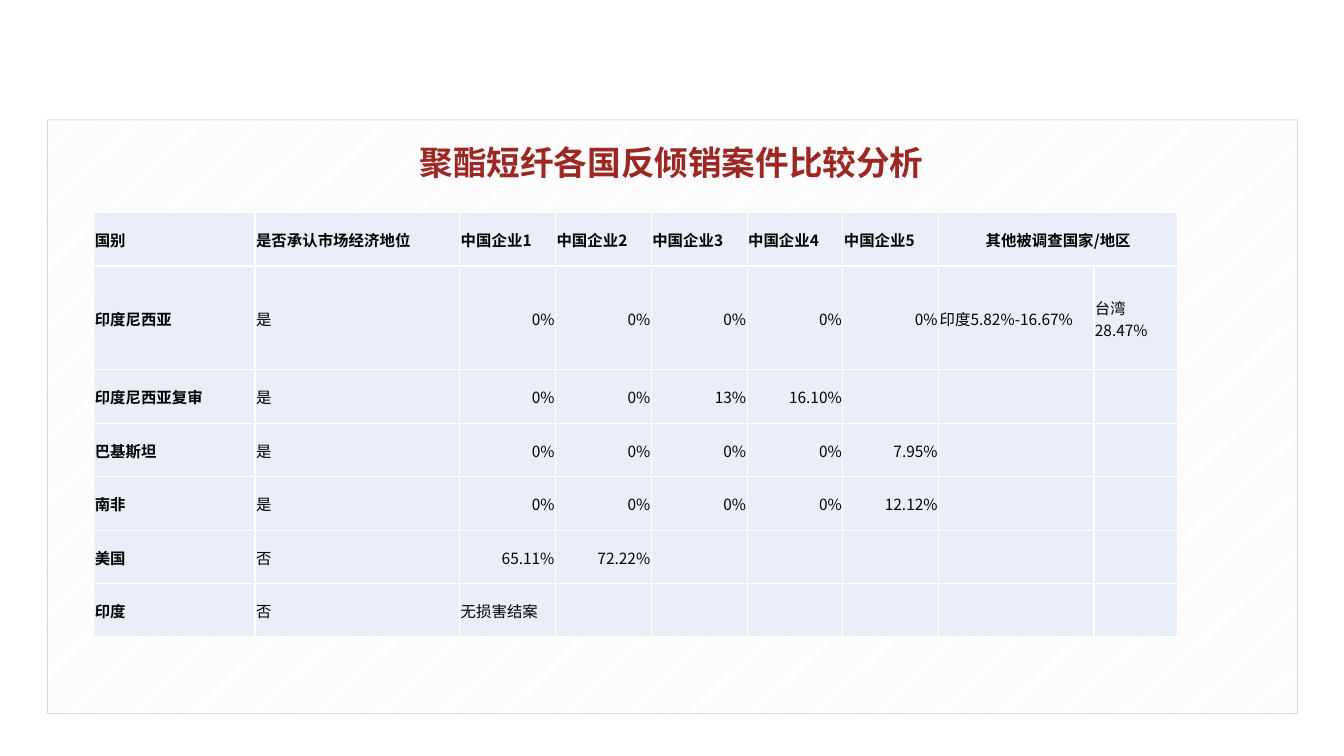
from lxml.etree import SubElement
from pptx import Presentation
from pptx.dml.color import RGBColor
from pptx.enum.dml import MSO_PATTERN
from pptx.enum.shapes import MSO_SHAPE
from pptx.enum.text import MSO_ANCHOR, PP_ALIGN
from pptx.oxml.ns import qn
from pptx.util import Inches, Pt

# Content
TITLE = "聚酯短纤各国反倾销案件比较分析"
HEADER = ["国别", "是否承认市场经济地位", "中国企业1", "中国企业2", "中国企业3",
          "中国企业4", "中国企业5", "其他被调查国家/地区"]
CASES = [
    ["印度尼西亚", "是", "0%", "0%", "0%", "0%", "0%", "印度5.82%-16.67%", "台湾28.47%"],
    ["印度尼西亚复审", "是", "0%", "0%", "13%", "16.10%"],
    ["巴基斯坦", "是", "0%", "0%", "0%", "0%", "7.95%"],
    ["南非", "是", "0%", "0%", "0%", "0%", "12.12%"],
    ["美国", "否", "65.11%", "72.22%"],
    ["印度", "否", "无损害结案"],
]
COL_WIDTHS = [1.6, 2.03] + [0.95] * 5 + [1.54, 0.83]
ROW_HEIGHTS = [0.53, 1.03] + [0.53] * 5
FIRM_COLS = range(2, 7)
OTHER_COL = 7
FONT = "Noto Sans CJK SC"


def rgb(value):
    return RGBColor.from_string(value)


def add_run(p, text, size, color, bold):
    r = p.add_run()
    r.text = text
    r.font.size, r.font.bold = Pt(size), bold
    r.font.color.rgb = rgb(color)
    r.font.name = FONT
    SubElement(r.font._element, qn("a:ea"), typeface=FONT)


def style_cell(cell):
    cell.vertical_anchor = MSO_ANCHOR.MIDDLE
    cell.margin_left = cell.margin_right = cell.margin_top = Inches(0.01)
    cell.margin_bottom = 0
    tc_pr = cell._tc.get_or_add_tcPr()
    for side in ("a:lnL", "a:lnR", "a:lnT", "a:lnB"):
        ln = SubElement(tc_pr, qn(side), w=str(Pt(1)))
        fill = SubElement(ln, qn("a:solidFill"))
        SubElement(fill, qn("a:srgbClr"), val="FFFFFF")
    cell.fill.solid()
    cell.fill.fore_color.rgb = rgb("EAEFF7")


prs = Presentation()
prs.slide_width, prs.slide_height = Inches(13.33), Inches(7.5)
s = prs.slides.add_slide(prs.slide_layouts[6])

# Hatched panel with a faint outline
panel = s.shapes.add_shape(MSO_SHAPE.RECTANGLE, Inches(0.47), Inches(1.19),
                           Inches(12.4), Inches(5.89))
panel.shadow.inherit = False
panel.fill.patterned()
panel.fill.pattern = MSO_PATTERN.LIGHT_UPWARD_DIAGONAL
panel.fill.fore_color.rgb = rgb("F2F2F2")
panel.fill.back_color.rgb = rgb("FFFFFF")
panel.line.width = Pt(0.75)
panel.line.color.rgb = rgb("595959")
line_color = panel.line._ln.find(".//" + qn("a:srgbClr"))
SubElement(line_color, qn("a:alpha"), val="20000")

# Title
tf = s.shapes.add_textbox(Inches(2.27), Inches(1.33), Inches(8.78), Inches(0.6)).text_frame
tf.word_wrap = True
tf.vertical_anchor = MSO_ANCHOR.MIDDLE
p = tf.paragraphs[0]
p.alignment, p.line_spacing = PP_ALIGN.CENTER, 0.9
add_run(p, TITLE, 24, "9B2823", True)

# Table of cases
table = s.shapes.add_table(len(ROW_HEIGHTS), len(COL_WIDTHS), Inches(0.93), Inches(2.11),
                           Inches(sum(COL_WIDTHS)), Inches(sum(ROW_HEIGHTS))).table
table.first_row = table.horz_banding = False
for column, width in zip(table.columns, COL_WIDTHS):
    column.width = Inches(width)
for row, height in zip(table.rows, ROW_HEIGHTS):
    row.height = Inches(height)
for cell in table.iter_cells():
    style_cell(cell)
table.cell(0, OTHER_COL).merge(table.cell(0, OTHER_COL + 1))

for i, values in enumerate([HEADER] + CASES):
    for j, text in enumerate(values):
        p = table.cell(i, j).text_frame.paragraphs[0]
        if i == 0 and j == OTHER_COL:
            p.alignment = PP_ALIGN.CENTER
        elif j in FIRM_COLS and text.endswith("%"):
            p.alignment = PP_ALIGN.RIGHT
        add_run(p, text, 11, "000000", i == 0 or j == 0)

prs.save("out.pptx")
